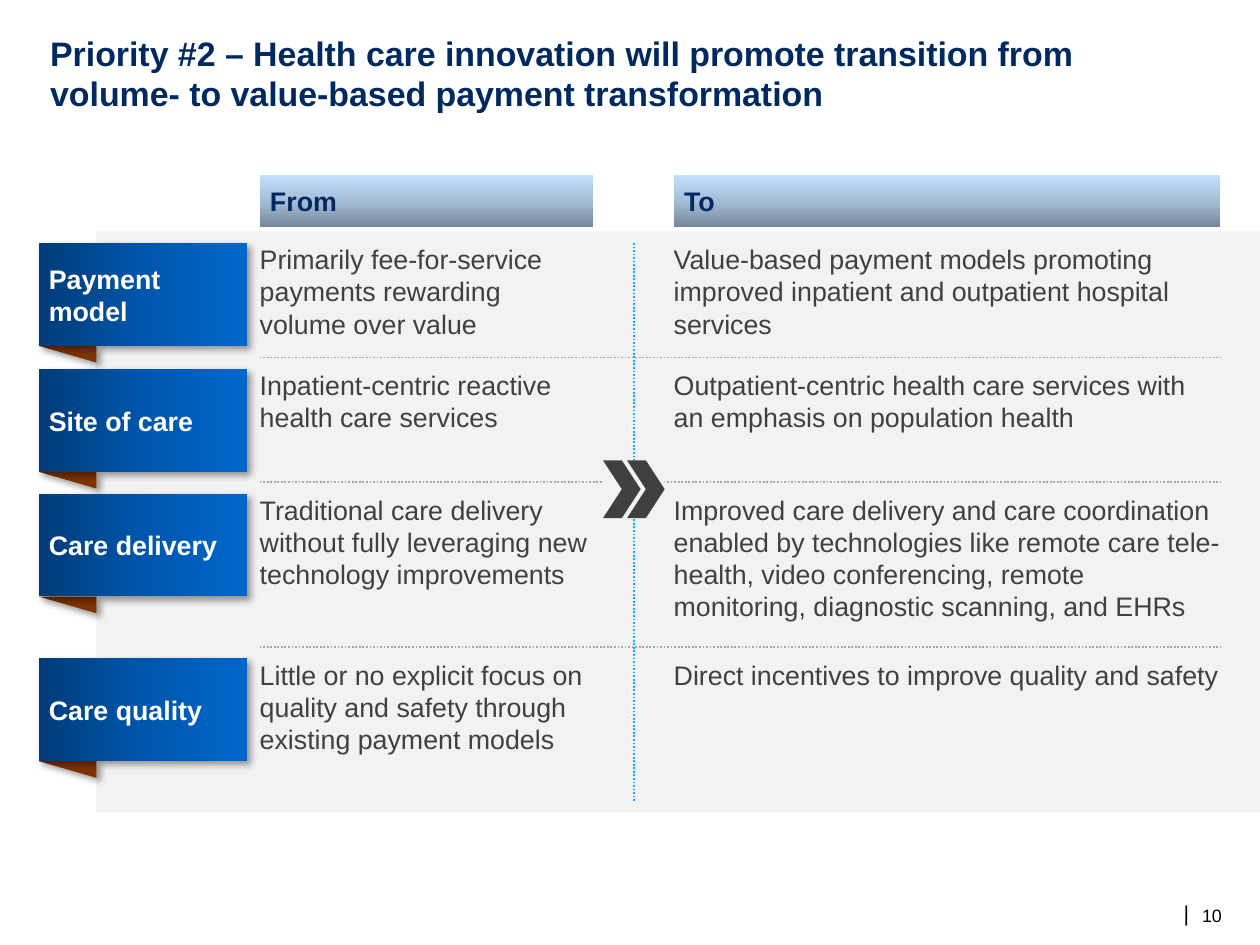
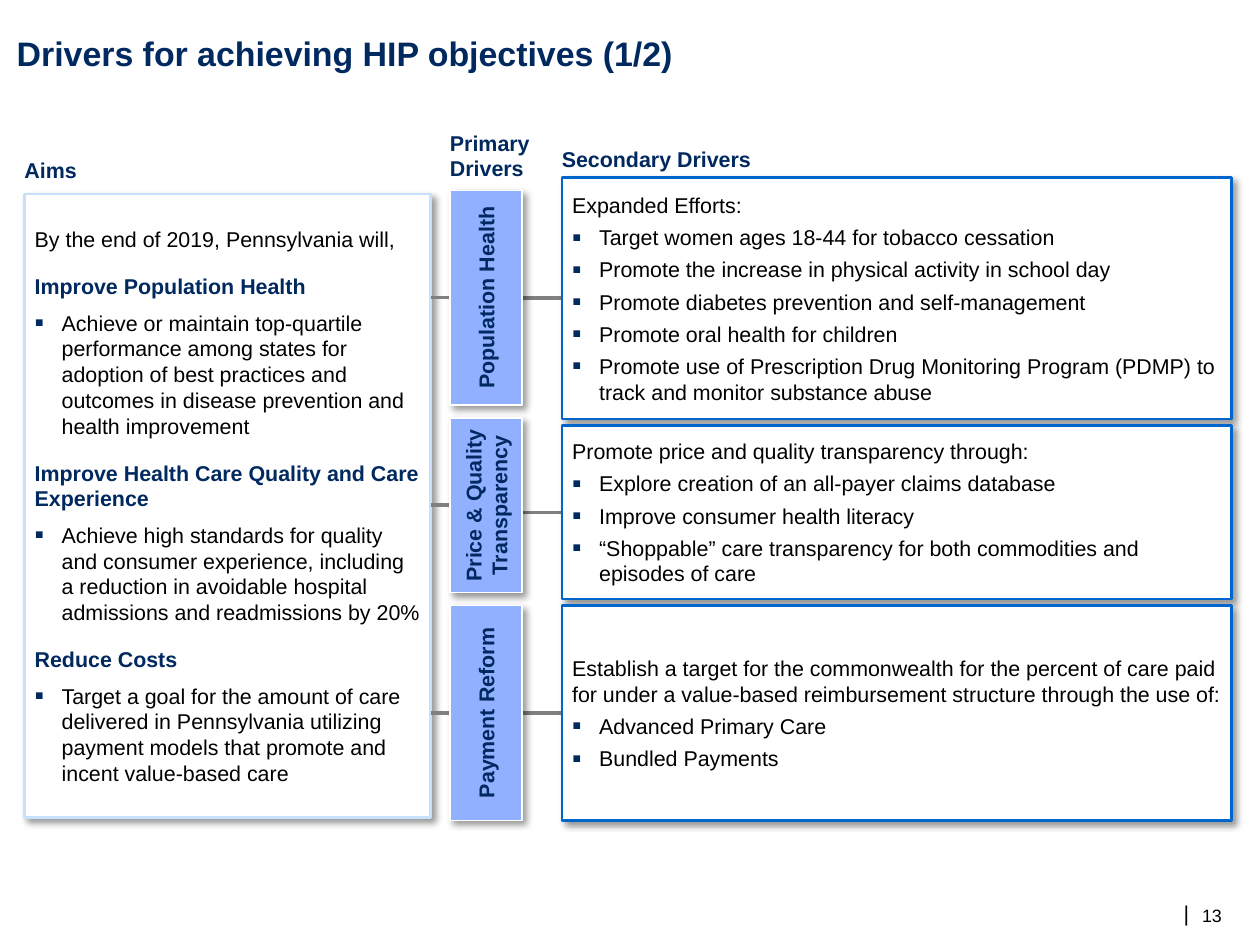
from collections import namedtuple

from lxml import etree
from pptx import Presentation
from pptx import util as u
from pptx.dml.color import RGBColor
from pptx.enum import dml, shapes, text
from pptx.oxml import ns

WIDTH, HEIGHT = 9.8, 7.35
FONT = "Arial"
SIZES = {"title": 19, "body": 15, "small": 12, "page": 10}
COLORS = {
    "navy": "002960", "blue": "0066CC", "pale": "C7E0FB", "spine": "91B0FF",
    "black": "000000", "white": "FFFFFF", "ink": "404040", "band": "F2F2F2",
    "rule": "A6A6A6", "link": "808080", "divider": "00B0F0", "fold": "803300",
}
TAB_STOPS = ["003C79", "0056AC", "0066CC"]
HEADER_STOPS = ["748597", "A4BDD7", "C3E0FF"]
INSET = 0.08
BULLET_INDENT = 0.21

Box = namedtuple("Box", "left top width height")

TRANSITION_ROWS = [
    (1.89, "Payment model",
     "Primarily fee-for-service payments rewarding volume over value",
     "Value-based payment models promoting improved inpatient and outpatient hospital services"),
    (2.87, "Site of care",
     "Inpatient-centric reactive health care services",
     "Outpatient-centric health care services with an emphasis on population health"),
    (3.84, "Care delivery",
     "Traditional care delivery without fully leveraging new technology improvements",
     "Improved care delivery and care coordination enabled by technologies like remote care "
     "tele-health, video conferencing, remote monitoring, diagnostic scanning, and EHRs"),
    (5.12, "Care quality",
     "Little or no explicit focus on quality and safety through existing payment models",
     "Direct incentives to improve quality and safety"),
]

AIMS_INTRO = "By the end of 2019, Pennsylvania will,"
AIMS = [
    ("Improve Population Health",
     "Achieve or maintain top-quartile performance among states for adoption of best practices "
     "and outcomes in disease prevention and health improvement"),
    ("Improve Health Care Quality and Care Experience",
     "Achieve high standards for quality and consumer experience, including a reduction in "
     "avoidable hospital admissions and readmissions by 20%"),
    ("Reduce Costs",
     "Target a goal for the amount of care delivered in Pennsylvania utilizing payment models "
     "that promote and incent value-based care"),
]
# Each driver: name, top and height of its spine, top and height of its panel, lead, bullets
DRIVERS = [
    ("Population Health", (1.48, 1.67), (1.38, 1.88), "Expanded Efforts:",
     ["Target women ages 18-44 for tobacco cessation",
      "Promote the increase in physical activity in school day",
      "Promote diabetes prevention and self-management",
      "Promote oral health for children",
      "Promote use of Prescription Drug Monitoring Program (PDMP) to track and monitor "
      "substance abuse"]),
    ("Price & Quality Transparency", (3.25, 1.36), (3.31, 1.35),
     "Promote price and quality transparency through:",
     ["Explore creation of an all-payer claims database",
      "Improve consumer health literacy",
      "“Shoppable” care transparency for both commodities and episodes of care"]),
    ("Payment Reform", (4.71, 1.67), (4.71, 1.67),
     "Establish a target for the commonwealth for the percent of care paid for under a "
     "value-based reimbursement structure through the use of:",
     ["Advanced Primary Care", "Bundled Payments"]),
]


def rgb(color):
    return RGBColor.from_string(COLORS[color])


def inches(box):
    return [u.Inches(length) for length in box]


def add_xml(parent, tag, **attributes):
    return etree.SubElement(parent, ns.qn(tag), attributes)


def cast_shadow(shape):
    shape.shadow.inherit = False
    effects = shape._element.spPr.find(ns.qn("a:effectLst"))
    shadow = add_xml(effects, "a:outerShdw", blurRad=str(u.Pt(4)), dist=str(u.Pt(3)),
                     dir="2700000", algn="tl", rotWithShape="0")
    color = add_xml(shadow, "a:srgbClr", val=COLORS["black"])
    add_xml(color, "a:alpha", val="40000")


def fill_gradient(shape, stops, degrees):
    shape.fill.gradient()
    gradient = shape._element.spPr.find(ns.qn("a:gradFill"))
    for child in list(gradient):
        gradient.remove(child)
    stop_list = add_xml(gradient, "a:gsLst")
    for index, color in enumerate(stops):
        stop = add_xml(stop_list, "a:gs", pos=str(index * 50000))
        add_xml(stop, "a:srgbClr", val=color)
    add_xml(gradient, "a:lin", ang=str(degrees * 60000), scaled="0")


def style_shape(shape, fill=None, line=None, line_width=1.5, shadow=False):
    if fill:
        shape.fill.solid()
        shape.fill.fore_color.rgb = rgb(fill)
    if line:
        shape.line.color.rgb = rgb(line)
        shape.line.width = u.Pt(line_width)
    else:
        shape.line.fill.background()
    shape.shadow.inherit = False
    if shadow:
        cast_shadow(shape)
    return shape


def add_block(slide, box, kind=shapes.MSO_SHAPE.RECTANGLE, **style):
    return style_shape(slide.shapes.add_shape(kind, *inches(box)), **style)


def add_line(slide, start, end, color, width, dotted=False):
    line = slide.shapes.add_connector(shapes.MSO_CONNECTOR.STRAIGHT, *inches(start + end))
    line.line.color.rgb = rgb(color)
    line.line.width = u.Pt(width)
    if dotted:
        line.line.dash_style = dml.MSO_LINE.ROUND_DOT
    add_xml(line._element.spPr, "a:effectLst")


def prepare_frame(shape, inset=0.0, anchor=text.MSO_ANCHOR.TOP):
    frame = shape.text_frame
    frame.word_wrap = True
    frame.auto_size = text.MSO_AUTO_SIZE.NONE
    frame.vertical_anchor = anchor
    frame.margin_left = frame.margin_right = u.Inches(inset)
    frame.margin_top = frame.margin_bottom = u.Inches(inset)
    return frame


def write(paragraph, words, size, color, bold=False, align=text.PP_ALIGN.LEFT,
          before=0.0, bullet=False):
    """Add one run; space before is a share of the text size."""
    if bullet:
        properties = paragraph._p.get_or_add_pPr()
        properties.set("marL", str(u.Inches(BULLET_INDENT)))
        properties.set("indent", str(-u.Inches(BULLET_INDENT)))
        add_xml(add_xml(properties, "a:buClr"), "a:srgbClr", val=COLORS["navy"])
        add_xml(properties, "a:buSzPct", val="125000")
        add_xml(properties, "a:buFont", typeface=FONT)
        add_xml(properties, "a:buChar", char="▪")
    points = SIZES[size]
    paragraph.alignment = align
    paragraph.line_spacing = u.Pt(points * 1.2)
    if before:
        paragraph.space_before = u.Pt(points * before)
    run = paragraph.add_run()
    run.text = words
    run.font.name = FONT
    run.font.size = u.Pt(points)
    run.font.bold = bold
    run.font.color.rgb = rgb(color)


def add_label(slide, box, words, size, color, **style):
    frame = prepare_frame(slide.shapes.add_textbox(*inches(box)))
    write(frame.paragraphs[0], words, size, color, **style)


def label_block(shape, words, size, color, **style):
    frame = prepare_frame(shape, INSET, text.MSO_ANCHOR.MIDDLE)
    write(frame.paragraphs[0], words, size, color, bold=True, **style)


def start_slide(presentation, title, title_box, number):
    slide = presentation.slides.add_slide(presentation.slide_layouts[5])
    holder = slide.shapes.title
    holder.left, holder.top, holder.width, holder.height = inches(title_box)
    write(prepare_frame(holder).paragraphs[0], title, "title", "navy", bold=True)
    add_label(slide, Box(9.35, 7.04, 0.3, 0.17), number, "page", "black")
    add_label(slide, Box(9.15, 7, 0.1, 0.2), "|", "small", "black",
              align=text.PP_ALIGN.RIGHT)
    return slide


def add_ribbon_tab(slide, box, name):
    """Gradient tab with a folded corner under its left end."""
    left, top = box.left, box.top + box.height
    builder = slide.shapes.build_freeform(u.Inches(left), u.Inches(top))
    builder.add_line_segments([(u.Inches(left + 0.45), u.Inches(top + 0.13)),
                               (u.Inches(left + 0.45), u.Inches(top))], close=True)
    style_shape(builder.convert_to_shape(), fill="fold", shadow=True)
    tab = add_block(slide, box, shadow=True)
    fill_gradient(tab, TAB_STOPS, 0)
    label_block(tab, name, "body", "white")


def add_double_chevron(slide, box):
    add_block(slide, box, fill="band")
    width = box.width * 0.61
    for left in (box.left, box.left + box.width - width):
        add_block(slide, Box(left, box.top, width, box.height),
                  shapes.MSO_SHAPE.CHEVRON, fill="ink")


def build_transition_slide(presentation):
    slide = start_slide(
        presentation,
        "Priority #2 – Health care innovation will promote transition from volume- to "
        "value-based payment transformation", Box(0.39, 0.25, 9.03, 0.64), "10")
    band = Box(0.75, 1.8, WIDTH - 0.75, 4.52)
    columns = [("From", 2.02, 2.59), ("To", 5.24, 4.25)]
    add_block(slide, band, fill="band")
    for name, left, width in columns:
        header = add_block(slide, Box(left, band.top - 0.44, width, 0.41))
        fill_gradient(header, HEADER_STOPS, 270)
        label_block(header, name, "body", "navy")

    add_line(slide, (4.93, 1.89), (4.93, 6.24), "divider", 1, dotted=True)
    for index, (top, name, *cells) in enumerate(TRANSITION_ROWS):
        add_ribbon_tab(slide, Box(0.3, top, 1.62, 0.8), name)
        for (_, left, width), words in zip(columns, cells):
            add_label(slide, Box(left, top, width, 1.01), words, "body", "ink")
        if index:
            add_line(slide, (2.02, top - 0.09), (9.5, top - 0.09), "rule", 1, dotted=True)
    add_double_chevron(slide, Box(4.69, 3.58, 0.48, 0.45))


def add_panel(slide, box, line, paragraphs):
    """Outlined panel; paragraphs are (words, style) pairs."""
    panel = add_block(slide, box, fill="white", line=line, shadow=True)
    frame = prepare_frame(panel, INSET, text.MSO_ANCHOR.MIDDLE)
    for index, (words, style) in enumerate(paragraphs):
        paragraph = frame.add_paragraph() if index else frame.paragraphs[0]
        write(paragraph, words, "small", **style)


def add_spine(slide, box, name):
    """Block turned to read upwards, filling the given upright box."""
    shift = (box.height - box.width) / 2
    turned = Box(box.left - shift, box.top + shift, box.height, box.width)
    spine = add_block(slide, turned, fill="spine", line="white", line_width=0.75, shadow=True)
    spine.rotation = 270
    label_block(spine, name, "small", "navy", align=text.PP_ALIGN.CENTER)


def build_drivers_slide(presentation):
    slide = start_slide(presentation, "Drivers for achieving HIP objectives (1/2)",
                        Box(0.13, 0.25, 9.43, 0.32), "13")
    aims = Box(0.19, 1.51, 3.16, 4.85)
    spine_left, spine_width = 3.5, 0.56
    panel_left, panel_width = 4.37, 5.21
    for box, heading in [(Box(aims.left, 1.22, 3.03, 0.2), "Aims"),
                         (Box(spine_left, 1.01, 0.8, 0.4), "Primary Drivers"),
                         (Box(panel_left, 1.14, 4.86, 0.2), "Secondary Drivers")]:
        add_label(slide, box, heading, "small", "navy", bold=True)

    plain = {"color": "black"}
    aim_paragraphs = [(AIMS_INTRO, plain)]
    for heading, goal in AIMS:
        aim_paragraphs += [(heading, {"color": "navy", "bold": True, "before": 1}),
                           (goal, {"color": "black", "bullet": True, "before": 0.5})]
    add_panel(slide, aims, "pale", aim_paragraphs)

    item = {"color": "black", "bullet": True, "before": 0.3}
    for name, spine, panel, lead, bullets in DRIVERS:
        spine_middle, panel_middle = (top + height / 2 for top, height in (spine, panel))
        add_line(slide, (aims.left + aims.width, spine_middle), (spine_left, spine_middle),
                 "link", 2)
        add_line(slide, (spine_left + spine_width, panel_middle), (panel_left, panel_middle),
                 "link", 2)
        add_spine(slide, Box(spine_left, spine[0], spine_width, spine[1]), name)
        add_panel(slide, Box(panel_left, panel[0], panel_width, panel[1]), "blue",
                  [(lead, plain)] + [(words, item) for words in bullets])


def main():
    presentation = Presentation()
    presentation.slide_width, presentation.slide_height = u.Inches(WIDTH), u.Inches(HEIGHT)
    build_transition_slide(presentation)
    build_drivers_slide(presentation)
    presentation.save("out.pptx")


if __name__ == "__main__":
    main()
